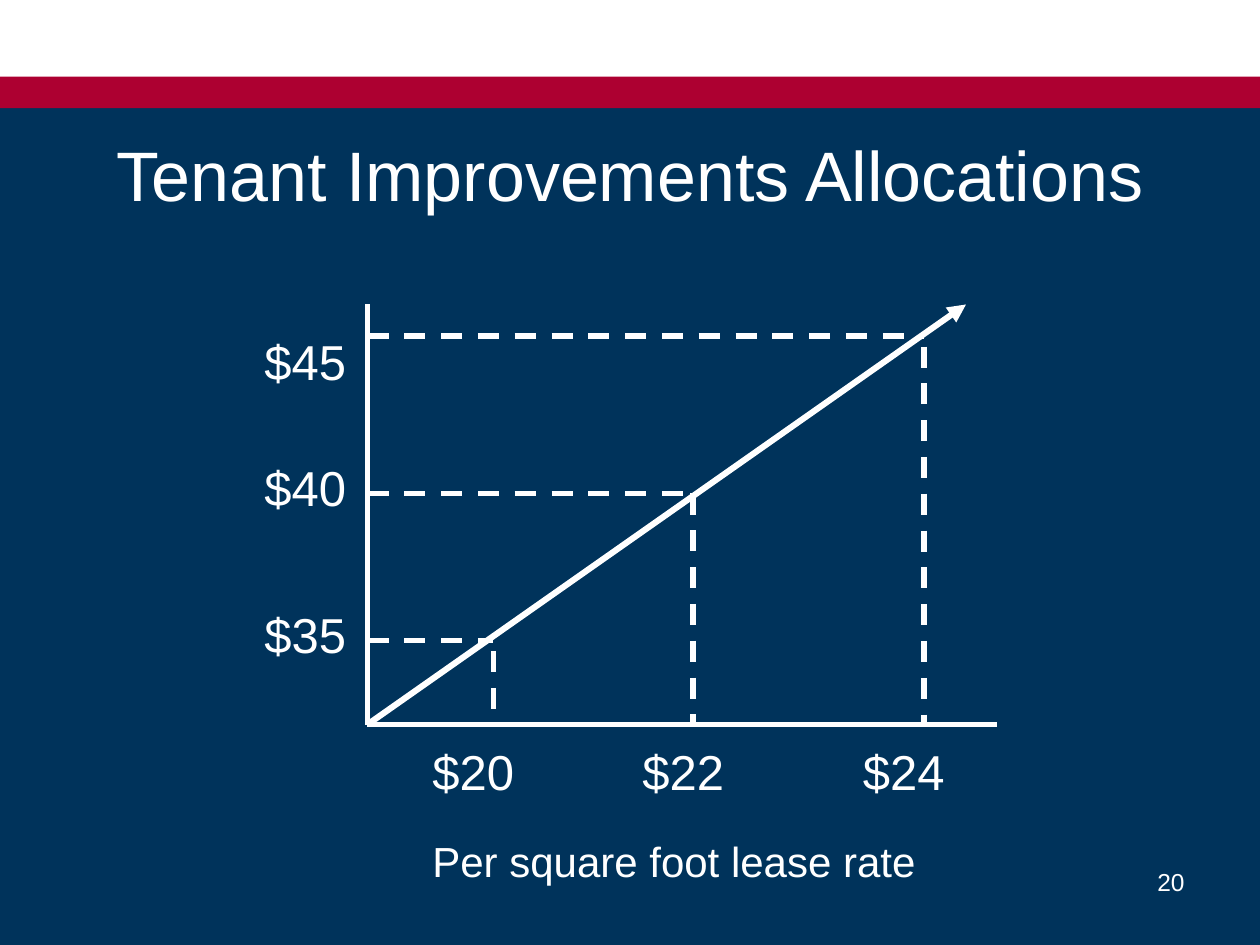
from pptx import Presentation, util as u
from pptx.dml.color import RGBColor
from pptx.enum import dml, shapes, text
from pptx.oxml import ns
from lxml import etree

NAVY = RGBColor(0x00, 0x33, 0x5B)
RED = RGBColor(0xAD, 0x00, 0x31)
WHITE = RGBColor(0xFF, 0xFF, 0xFF)
FONT = "Arial"
COLS, ROWS = 120, 90
CELL = u.Inches(10) / COLS
ORIGIN_X, ORIGIN_Y = 35, 69
AXIS_TOP, AXIS_RIGHT = 29, 95
TREND_END = 92

# label, label row, level row, label column, label width, rate column, drop start row
POINTS = [
    ("$35", 57, 61, "$20", 40, 12, 47, 62),
    ("$40", 43, 47, "$22", 60, 11, 66, 47),
    ("$45", 31, 32, "$24", 81, 12, 88, 33),
]


def grid(*cells):
    return [u.Emu(round(c * CELL)) for c in cells]


def style_text(tf, size, align):
    p = tf.paragraphs[0]
    p.alignment = align
    font = p.runs[0].font
    font.name, font.size = FONT, u.Pt(size)
    font.color.rgb = WHITE


def add_band(s, top, height, color):
    sp = s.shapes.add_shape(shapes.MSO_SHAPE.RECTANGLE, *grid(0, top, COLS, height))
    sp.shadow.inherit = False
    sp.fill.solid()
    sp.fill.fore_color.rgb = color
    sp.line.fill.background()


def add_title(s, words):
    sp = s.shapes.title
    sp.left, sp.top, sp.width, sp.height = grid(6, 9, 108, 15)
    tf = sp.text_frame
    tf.text = words
    tf.vertical_anchor = text.MSO_ANCHOR.MIDDLE
    style_text(tf, 40, text.PP_ALIGN.CENTER)


def add_label(s, words, left, top, width, height, size, align=text.PP_ALIGN.LEFT):
    tf = s.shapes.add_textbox(*grid(left, top, width, height)).text_frame
    tf.word_wrap = True
    tf.text = words
    style_text(tf, size, align)


def add_line(s, x1, y1, x2, y2, width=3, dashed=False, arrow=False):
    line = s.shapes.add_connector(shapes.MSO_CONNECTOR.STRAIGHT, *grid(x1, y1, x2, y2))
    line.line.color.rgb = WHITE
    line.line.width = u.Pt(width)
    if dashed:
        line.line.dash_style = dml.MSO_LINE.DASH
    if arrow:
        etree.SubElement(line.line._get_or_add_ln(), ns.qn("a:tailEnd"), type="triangle")
    etree.SubElement(line._element.spPr, ns.qn("a:effectLst"))


def add_graph(s):
    add_line(s, ORIGIN_X, AXIS_TOP, ORIGIN_X, ORIGIN_Y)
    add_line(s, ORIGIN_X, ORIGIN_Y, AXIS_RIGHT, ORIGIN_Y)
    for cost, cost_row, level, rate, rate_col, rate_width, x, drop in POINTS:
        add_label(s, cost, 24, cost_row, 11, 6.8, 28)
        add_label(s, rate, rate_col, 70, rate_width, 6.8, 28)
        add_line(s, ORIGIN_X, level, x, level, dashed=True)
        add_line(s, x, drop, x, ORIGIN_Y, dashed=True)
    add_line(s, ORIGIN_X, ORIGIN_Y, TREND_END, AXIS_TOP, width=3.5, arrow=True)


def main():
    prs = Presentation()
    prs.slide_width, prs.slide_height = grid(COLS, ROWS)
    s = prs.slides.add_slide(prs.slide_layouts[5])
    s.background.fill.solid()
    s.background.fill.fore_color.rgb = NAVY
    add_band(s, 0, 10, WHITE)
    add_band(s, 7.3, 3, RED)
    add_title(s, "Tenant Improvements Allocations")
    add_label(s, "Per square foot lease rate", 40, 79, 49, 6, 24)
    add_graph(s)
    add_label(s, "20", 86, 82, 28, 6.2, 14, text.PP_ALIGN.RIGHT)
    prs.save("out.pptx")


if __name__ == "__main__":
    main()
